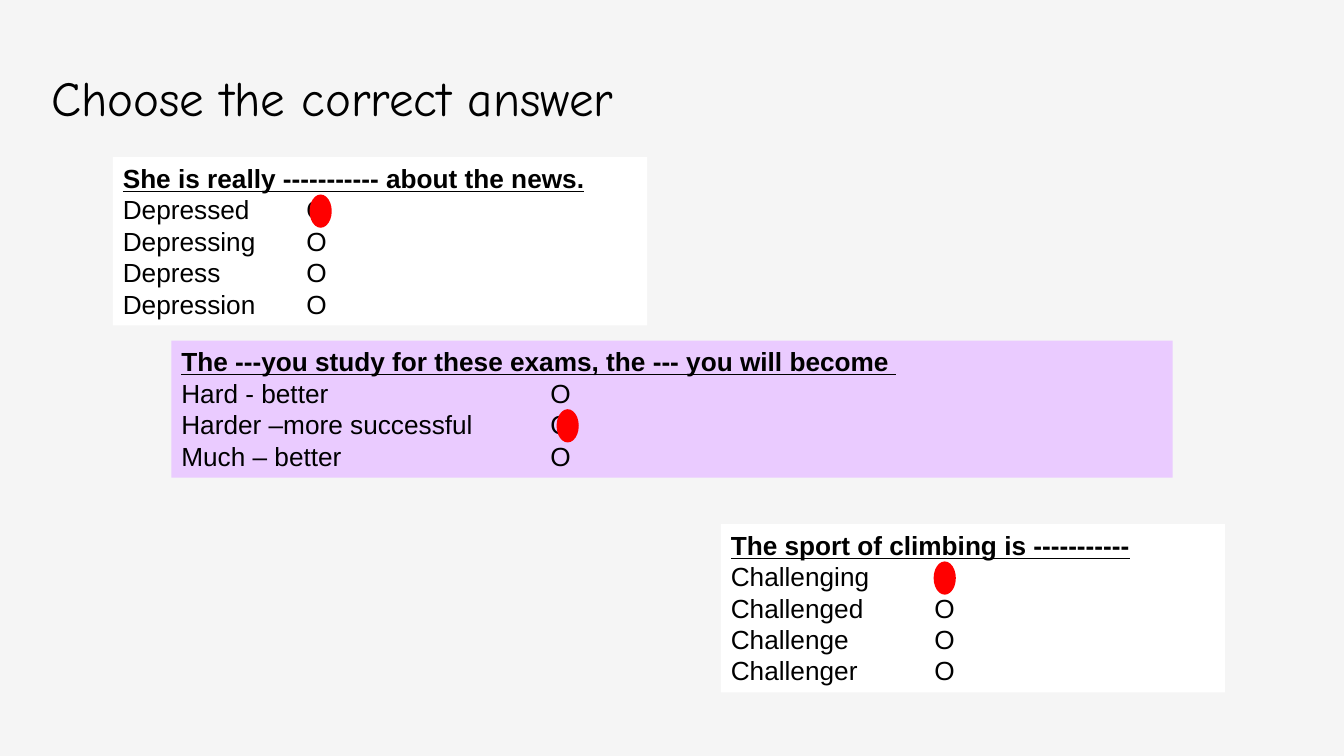
from dataclasses import dataclass

from lxml import etree
from pptx import Presentation
from pptx.dml.color import RGBColor
from pptx.enum import shapes, text
from pptx.oxml import ns
from pptx.util import Inches, Pt

BLACK = RGBColor(0x00, 0x00, 0x00)
WHITE = RGBColor(0xFF, 0xFF, 0xFF)
LILAC = RGBColor(0xEA, 0xCB, 0xFF)
RED = RGBColor(0xFF, 0x00, 0x00)
PALE_GREY = RGBColor(0xF5, 0xF5, 0xF5)

LINE_PITCH = 0.31
FIRST_LINE = 0.06


@dataclass
class Question:
    left: float
    top: float
    width: float
    height: float
    fill: RGBColor
    prompt: str
    options: list[str]
    circle_tab: float
    answer_row: int
    answer_left: float


QUESTIONS = [
    Question(1.12, 1.56, 5.3, 1.67, WHITE, "She is really ----------- about the news.",
             ["Depressed\tΟ", "Depressing\tO", "Depress\tΟ", "Depression\tO"], 1.82, 1, 3.07),
    Question(7.15, 5.2, 5, 1.67, WHITE, "The sport of climbing is -----------",
             ["Challenging\tΟ", "Challenged\tO", "Challenge\tΟ", "Challenger\tΟ"], 2.02, 1, 9.26),
    Question(1.7, 3.38, 9.93, 1.36, LILAC,
             "The ---you study for these exams, the --- you will become ",
             ["Hard - better\tΟ", "Harder –more successful\tO", "Much – better\tΟ"], 3.66, 2, 5.52),
]


def add_filled(slide, preset, left: float, top: float, width: float, height: float, fill: RGBColor):
    shape = slide.shapes.add_shape(preset, Inches(left), Inches(top), Inches(width), Inches(height))
    shape.shadow.inherit = False
    shape.fill.solid()
    shape.fill.fore_color.rgb = fill
    shape.line.fill.background()
    return shape


def set_tab(paragraph, position: float) -> None:
    tabs = etree.SubElement(paragraph._p.get_or_add_pPr(), ns.qn("a:tabLst"))
    etree.SubElement(tabs, ns.qn("a:tab"), pos=str(Inches(position)), algn="l")


def format_run(run, font_name: str, size: float) -> None:
    run.font.name = font_name
    run.font.size = Pt(size)
    run.font.color.rgb = BLACK


def add_question(slide, question: Question) -> None:
    card = add_filled(slide, shapes.MSO_SHAPE.RECTANGLE, question.left, question.top,
                      question.width, question.height, question.fill)
    frame = card.text_frame
    frame.word_wrap = True
    frame.vertical_anchor = text.MSO_ANCHOR.TOP
    frame.text = "\n".join([question.prompt, *question.options])
    for row, paragraph in enumerate(frame.paragraphs):
        paragraph.alignment = text.PP_ALIGN.LEFT
        if row > 0:
            set_tab(paragraph, question.circle_tab)
        for run in paragraph.runs:
            format_run(run, "Arial", 18.7)
            run.font.bold = run.font.underline = row == 0


def add_answer(slide, question: Question) -> None:
    top = question.top + FIRST_LINE + LINE_PITCH * question.answer_row
    add_filled(slide, shapes.MSO_SHAPE.OVAL, question.answer_left, top, 0.22, 0.33, RED)


def add_title(slide) -> None:
    title = slide.shapes.title
    title.left, title.top = Inches(0.41), Inches(0.55)
    title.width, title.height = Inches(11.01), Inches(0.83)
    frame = title.text_frame
    frame.text = "Choose the correct answer"
    frame.vertical_anchor = text.MSO_ANCHOR.MIDDLE
    frame.margin_left = frame.margin_right = Inches(0.1)
    frame.margin_top = frame.margin_bottom = Inches(0.1)
    heading = frame.paragraphs[0]
    heading.alignment = text.PP_ALIGN.LEFT
    format_run(heading.runs[0], "Comic Neue", 35)


def main() -> None:
    deck = Presentation()
    deck.slide_width, deck.slide_height = Inches(13.33), Inches(7.5)
    slide = deck.slides.add_slide(deck.slide_layouts[5])
    slide.background.fill.solid()
    slide.background.fill.fore_color.rgb = PALE_GREY
    add_title(slide)
    for question in QUESTIONS:
        add_question(slide, question)
    for question in QUESTIONS:
        add_answer(slide, question)
    deck.save("out.pptx")


if __name__ == "__main__":
    main()
